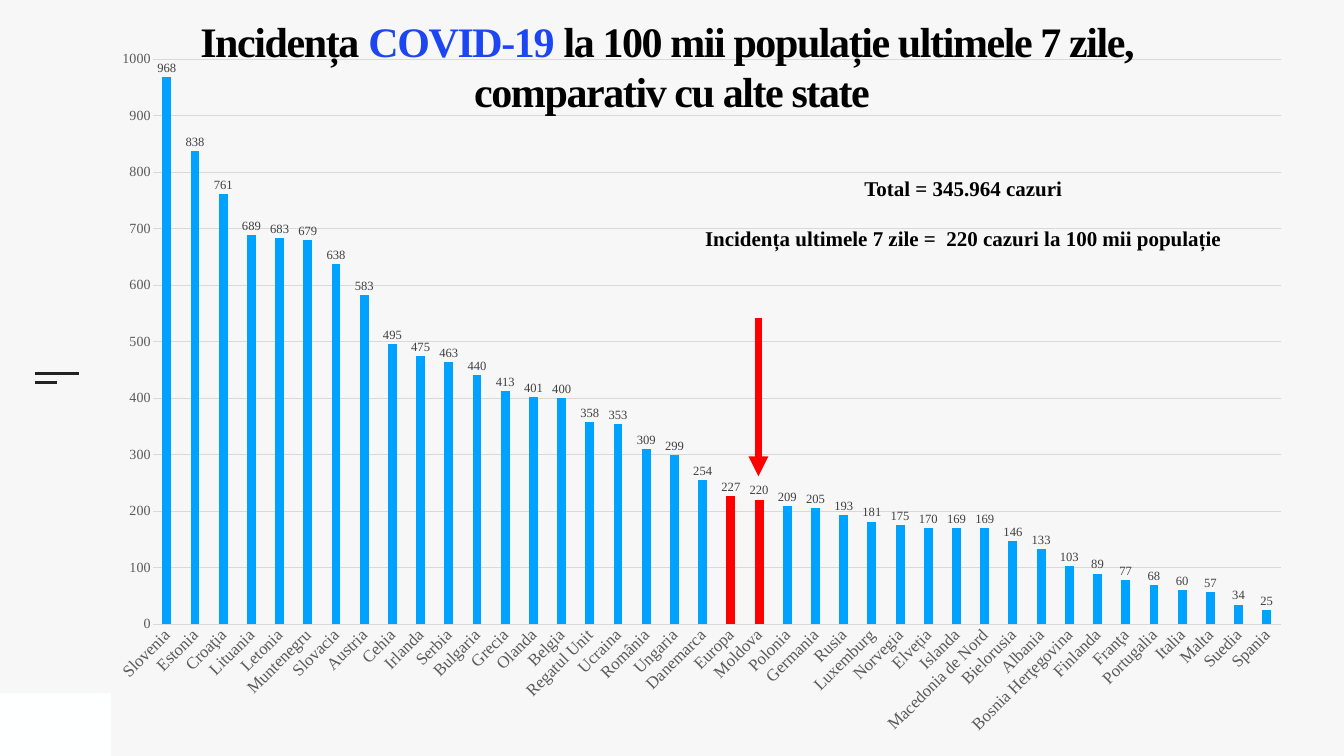
from pptx import Presentation, util as u
from pptx.chart.data import CategoryChartData
from pptx.dml.color import RGBColor
from pptx.enum import chart as ch, shapes, text
from pptx.oxml import parse_xml
from pptx.oxml.ns import nsdecls, qn

FONT = "Times New Roman"
BLUE, RED, BLACK, GRID = "00A2FF", "FF0000", "000000", "D9D9D9"
TITLE = [[("Incidența ", BLACK), ("COVID-19", "1D46F3"),
          (" la 100 mii populație ultimele 7 zile, ", BLACK)],
         [("comparativ cu alte state", BLACK)]]
NOTES = ["Total = 345.964 cazuri",
         "Incidența ultimele 7 zile =  220 cazuri la 100 mii populație"]
INCIDENCE = {
    "Slovenia": 968, "Estonia": 838, "Croaţia": 761, "Lituania": 689, "Letonia": 683,
    "Muntenegru": 679, "Slovacia": 638, "Austria": 583, "Cehia": 495, "Irlanda": 475,
    "Serbia": 463, "Bulgaria": 440, "Grecia": 413, "Olanda": 401, "Belgia": 400,
    "Regatul Unit": 358, "Ucraina": 353, "România": 309, "Ungaria": 299,
    "Danemarca": 254, "Europa": 227, "Moldova": 220, "Polonia": 209, "Germania": 205,
    "Rusia": 193, "Luxemburg": 181, "Norvegia": 175, "Elveția": 170, "Islanda": 169,
    "Macedonia de Nord": 169, "Bielorusia": 146, "Albania": 133,
    "Bosnia Herţegovina": 103, "Finlanda": 89, "Franţa": 77, "Portugalia": 68,
    "Italia": 60, "Malta": 57, "Suedia": 34, "Spania": 25}
HIGHLIGHTED = ["Europa", "Moldova"]
PLOT = {"x": 0.053, "y": 0.08, "w": 0.941, "h": 0.762}  # shares of the chart


def rgb(value):
    return RGBColor.from_string(value)


def box(*inches):
    return [u.Inches(v) for v in inches]


def style(font, size, color, bold=None):
    font.name, font.size, font.bold = FONT, u.Pt(size), bold
    font.color.rgb = rgb(color)


def stroke(line, color, width):
    line.color.rgb = rgb(color)
    line.width = u.Pt(width)


def set_margins(tf, inches):
    tf.margin_left = tf.margin_top = tf.margin_right = tf.margin_bottom = u.Inches(inches)


def add_line(s, ends, color, width, arrow=False):
    line = s.shapes.add_connector(shapes.MSO_CONNECTOR.STRAIGHT, *box(*ends))
    stroke(line.line, color, width)
    if arrow:
        line.line._get_or_add_ln().append(
            parse_xml(f'<a:tailEnd {nsdecls("a")} type="triangle"/>'))
    line._element.spPr.append(parse_xml(f'<a:effectLst {nsdecls("a")}/>'))


def place_plot(chart):
    """Fix the inner plot area at the shares given in PLOT."""
    area = chart._chartSpace.chart.plotArea
    for old in area.findall(qn("c:layout")):
        area.remove(old)
    modes = "".join(f'<c:{k}Mode val="edge"/>' for k in "xy")
    sizes = "".join(f'<c:{k} val="{v}"/>' for k, v in PLOT.items())
    area.insert(0, parse_xml(
        f'<c:layout {nsdecls("c")}><c:manualLayout><c:layoutTarget val="inner"/>'
        f'{modes}{sizes}</c:manualLayout></c:layout>'))


def add_incidence_chart(s):
    data = CategoryChartData(number_format="0")
    data.categories = list(INCIDENCE)
    data.add_series("Series 1", list(INCIDENCE.values()))
    chart = s.shapes.add_chart(ch.XL_CHART_TYPE.COLUMN_CLUSTERED,
                               *box(1.77, 0, 23.79, 14.7), data).chart
    chart.has_legend = chart.has_title = False
    style(chart.font, 24, BLACK)
    place_plot(chart)

    cat, val = chart.category_axis, chart.value_axis
    for axis, size in ((cat, 24), (val, 20)):
        axis.major_tick_mark = axis.minor_tick_mark = ch.XL_TICK_MARK.NONE
        style(axis.tick_labels.font, size, "595959")
    stroke(cat.format.line, GRID, 0.75)
    cat._element.txPr.bodyPr.set("rot", "-2700000")
    val.minimum_scale, val.maximum_scale, val.major_unit = 0, 1000, 100
    val.format.line.fill.background()
    stroke(val.major_gridlines.format.line, GRID, 0.75)

    plot = chart.plots[0]
    plot.gap_width, plot.overlap, plot.vary_by_categories = 219, -27, False
    series = plot.series[0]
    series.format.fill.solid()
    series.format.fill.fore_color.rgb = rgb(BLUE)
    for name in HIGHLIGHTED:
        fill = series.points[list(INCIDENCE).index(name)].format.fill
        fill.solid()
        fill.fore_color.rgb = rgb(RED)
    labels = series.data_labels
    labels.show_value = True
    labels.position = ch.XL_LABEL_POSITION.OUTSIDE_END
    labels.number_format, labels.number_format_is_linked = "0", False
    style(labels.font, 18, "404040")


def fill_title(s):
    title = s.shapes.title
    title.left, title.top, title.width, title.height = box(0, 0.3, 26.67, 1.58)
    s.shapes._spTree.append(title._element)  # in front of the chart
    tf = title.text_frame
    tf.word_wrap, tf.auto_size = True, text.MSO_AUTO_SIZE.NONE
    tf.vertical_anchor = text.MSO_ANCHOR.TOP
    set_margins(tf, 0)
    p = tf.paragraphs[0]
    p.alignment, p.line_spacing = text.PP_ALIGN.CENTER, 1.0
    for i, line in enumerate(TITLE):
        if i:
            p.add_line_break()
        for words, color in line:
            r = p.add_run()
            r.text = words
            style(r.font, 60, color, True)
            r._r.get_or_add_rPr().set("spc", "-200")


def add_notes_text(s):
    tf = s.shapes.add_textbox(*box(13.33, 3.42, 11.57, 1.63)).text_frame
    tf.word_wrap, tf.vertical_anchor = True, text.MSO_ANCHOR.MIDDLE
    set_margins(tf, 0.06)
    tf.text = "\n".join(NOTES)
    for i, p in enumerate(tf.paragraphs):
        p.alignment = text.PP_ALIGN.CENTER
        p.space_before = u.Pt(35 * i)
        style(p.runs[0].font, 30, BLACK, True)


def main():
    prs = Presentation()
    prs.slide_width, prs.slide_height = box(26.67, 15)
    s = prs.slides.add_slide(prs.slide_layouts[5])
    s.background.fill.solid()
    s.background.fill.fore_color.rgb = rgb("F7F7F7")

    corner = s.shapes.add_shape(shapes.MSO_SHAPE.RECTANGLE, *box(0, 13.76, 2.2, 1.24))
    corner.shadow.inherit = False
    corner.fill.solid()
    corner.fill.fore_color.rgb = rgb("FEFFFF")
    corner.line.fill.background()
    for y, right in ((7.41, 1.57), (7.59, 1.13)):
        add_line(s, (0.69, y, right, y), "222222", 3)

    add_incidence_chart(s)
    add_line(s, (15.05, 6.3, 15.05, 9.45), RED, 9.5, arrow=True)
    fill_title(s)
    add_notes_text(s)
    prs.save("out.pptx")


if __name__ == "__main__":
    main()
